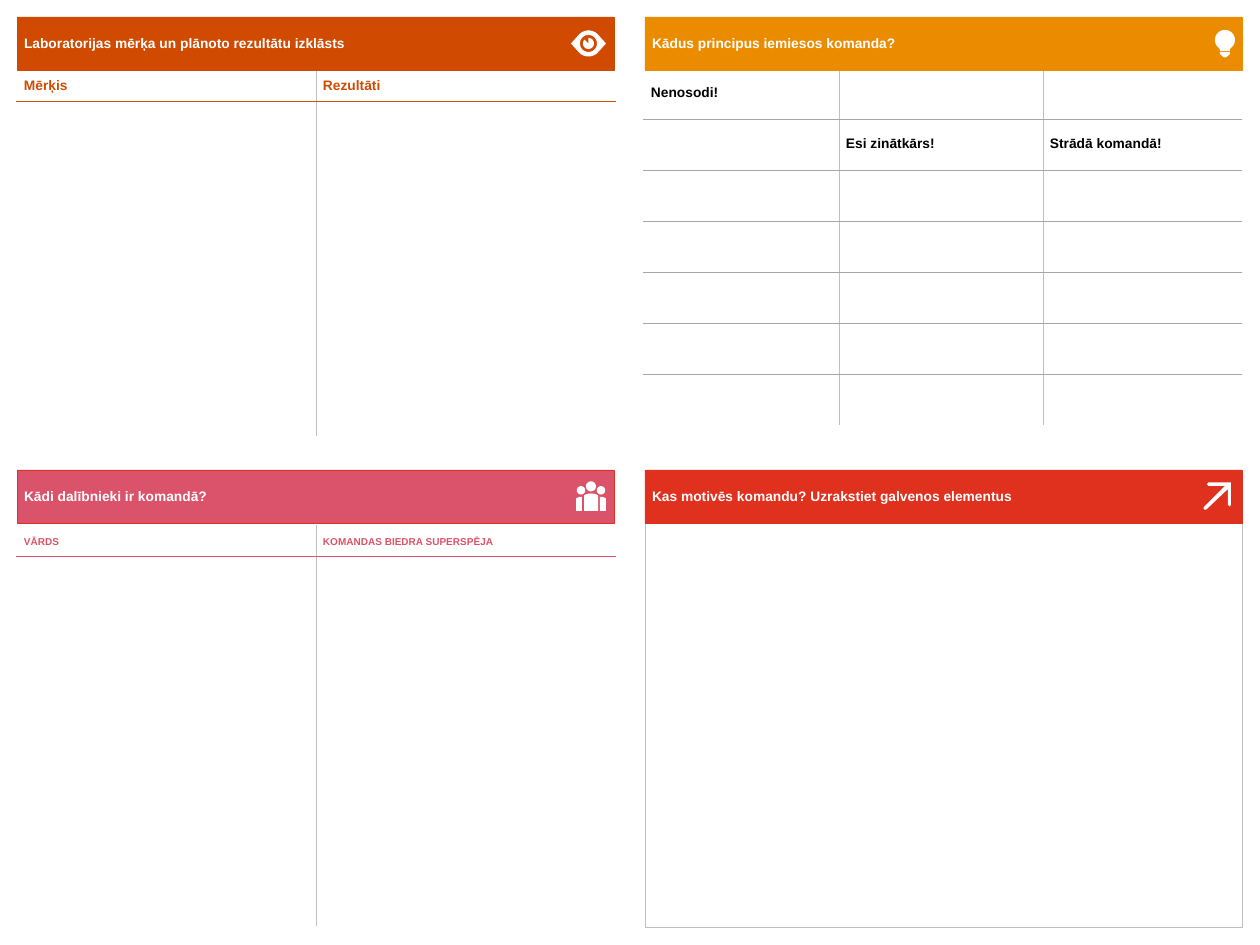
from math import cos, radians, sin

from lxml.etree import SubElement
from pptx import Presentation
from pptx.dml.color import RGBColor
from pptx.enum.shapes import MSO_SHAPE
from pptx.enum.text import MSO_ANCHOR, PP_ALIGN
from pptx.oxml.ns import qn
from pptx.util import Pt

PX = 914400 // 90
ICON_UNITS = 10  # freeform units per px

WHITE = RGBColor(0xFF, 0xFF, 0xFF)
BLACK = RGBColor(0x00, 0x00, 0x00)
ORANGE = RGBColor(0xD0, 0x4A, 0x02)
AMBER = RGBColor(0xEB, 0x8C, 0x00)
ROSE = RGBColor(0xDB, 0x53, 0x6A)
RED = RGBColor(0xE0, 0x30, 0x1E)
LIGHT_GREY = RGBColor(0xBF, 0xBF, 0xBF)
GREY = RGBColor(0xA6, 0xA6, 0xA6)

LEFT, RIGHT = 17, 645
TOP, BOTTOM = 17, 470
PANEL_WIDTH, HEADER_HEIGHT = 597, 53

# Content: headers as (text, left, top, fill, line)
MOTIVATION = ("Kas motivēs komandu? Uzrakstiet galvenos elementus", RIGHT, BOTTOM, RED, RED)
GOALS = ("Laboratorijas mērķa un plānoto rezultātu izklāsts", LEFT, TOP, ORANGE, ORANGE)
MEMBERS = ("Kādi dalībnieki ir komandā?", LEFT, BOTTOM, ROSE, RED)
PRINCIPLES = ("Kādus principus iemiesos komanda?", RIGHT, TOP, AMBER, AMBER)

PRINCIPLES_TABLE = dict(
    left=644, top=68, columns=[195, 204, 199], rows=[51] * 7,
    texts={(0, 0): "Nenosodi!", (1, 1): "Esi zinātkārs!", (1, 2): "Strādā komandā!"},
    size=11, color=BLACK, margins=(17, 16), rule=(GREY, 0.25))
GOALS_TABLE = dict(
    left=LEFT, top=68, columns=[299, 299], rows=[33, 335],
    texts={(0, 0): "Mērķis", (0, 1): "Rezultāti"},
    size=11, color=ORANGE, margins=(10, 7), rule=(ORANGE, 0.75))
MEMBERS_TABLE = dict(
    left=LEFT, top=526, columns=[299, 299], rows=[30, 370],
    texts={(0, 0): "VĀRDS", (0, 1): "KOMANDAS BIEDRA SUPERSPĒJA"},
    size=8, color=ROSE, margins=(10, 7), rule=(ROSE, 0.75))


def arc(center_x, center_y, radius, start=0, end=360, steps=36):
    angles = [radians(start + (end - start) * i / steps) for i in range(steps + 1)]
    return [(center_x + radius * cos(a), center_y + radius * sin(a)) for a in angles]


def mirror(points, axis):
    return [(2 * axis - x, y) for x, y in points]


# Icon outlines: each shape is a list of contours
EYE_X, EYE_Y = 588.5, 43.5
EYE = [[
    [(571, EYE_Y)] + arc(EYE_X, EYE_Y, 13, 225, 315)
    + [(606, EYE_Y)] + arc(EYE_X, EYE_Y, 13, 45, 135),
    arc(EYE_X, EYE_Y, 8.5),
    [(EYE_X, EYE_Y)] + arc(EYE_X, EYE_Y, 5.5, 225, -90),
]]
BULB = [[
    arc(1225, 40, 10, 140, 400) + [(1230, 49), (1230, 51), (1220, 51), (1220, 49)],
    [(1220, 52), (1230, 52), (1230, 54), (1226, 57.5), (1224, 57.5), (1220, 54)],
]]
TEAM_X = 591
SIDE_HEAD = arc(581, 490.3, 4.2)
SIDE_BODY = [(582, 497), (579, 497), (576, 498.5), (576, 511), (582, 511)]
MIDDLE_HALF = [(584, 511), (584, 495.5), (585.5, 494.5), (588, 493.8), (TEAM_X, 493.5)]
MIDDLE_BODY = MIDDLE_HALF + mirror(MIDDLE_HALF, TEAM_X)[::-1]
TEAM = [[points] for points in (
    arc(TEAM_X, 486.4, 5), SIDE_HEAD, mirror(SIDE_HEAD, TEAM_X),
    SIDE_BODY, MIDDLE_BODY, mirror(SIDE_BODY, TEAM_X))]
ARROW = [[[
    (1228, 489), (1206.5, 509.5), (1204.5, 509.8), (1203.5, 508.5), (1204, 507),
    (1225, 486), (1208.5, 486), (1207, 484.2), (1208.5, 482.5), (1231, 482.5),
    (1231, 505), (1229.5, 506.5), (1228, 505)]]]


def add_run(paragraph, text, size, color):
    paragraph.alignment = PP_ALIGN.LEFT
    run = paragraph.add_run()
    run.text = text
    run.font.name = "Arial"
    run.font.size = Pt(size)
    run.font.bold = True
    run.font.color.rgb = color


def add_rectangle(slide, left, top, width, height, fill, line, line_width):
    shape = slide.shapes.add_shape(
        MSO_SHAPE.RECTANGLE, left * PX, top * PX, width * PX, height * PX)
    shape.shadow.inherit = False
    if fill is None:
        shape.fill.background()
    else:
        shape.fill.solid()
        shape.fill.fore_color.rgb = fill
    shape.line.color.rgb = line
    shape.line.width = Pt(line_width)
    return shape


def add_header(slide, header, icon):
    text, left, top, fill, line = header
    shape = add_rectangle(slide, left, top, PANEL_WIDTH, HEADER_HEIGHT, fill, line, 0.25)
    frame = shape.text_frame
    frame.word_wrap = True
    frame.vertical_anchor = MSO_ANCHOR.MIDDLE
    frame.margin_left = frame.margin_right = 7 * PX
    frame.margin_top = frame.margin_bottom = 17 * PX
    add_run(frame.paragraphs[0], text, 11, WHITE)
    for contours in icon:
        add_outline(slide, contours)


def add_outline(slide, contours):
    scaled = [[(x * ICON_UNITS, y * ICON_UNITS) for x, y in points] for points in contours]
    builder = slide.shapes.build_freeform(*scaled[0][0], scale=PX / ICON_UNITS)
    for index, points in enumerate(scaled):
        if index:
            builder.move_to(*points[0])
        builder.add_line_segments(points[1:], close=True)
    shape = builder.convert_to_shape()
    shape.shadow.inherit = False
    shape.fill.solid()
    shape.fill.fore_color.rgb = WHITE
    shape.line.fill.background()


def set_border(cell, side, border):
    line = SubElement(cell._tc.get_or_add_tcPr(), qn("a:ln" + side))
    if border is None:
        SubElement(line, qn("a:noFill"))
        return
    color, width = border
    line.set("w", str(Pt(width)))
    fill = SubElement(line, qn("a:solidFill"))
    SubElement(fill, qn("a:srgbClr")).set("val", str(color))


def add_grid(slide, left, top, columns, rows, texts, size, color, margins, rule):
    table = slide.shapes.add_table(
        len(rows), len(columns), left * PX, top * PX,
        sum(columns) * PX, sum(rows) * PX).table
    table.first_row = table.horz_banding = False
    for column, width in zip(table.columns, columns):
        column.width = width * PX
    for row, height in zip(table.rows, rows):
        row.height = height * PX
    outer, divider = (WHITE, 1), (LIGHT_GREY, 0.25)
    last_row, last_column = len(rows) - 1, len(columns) - 1
    for r in range(len(rows)):
        for c in range(len(columns)):
            cell = table.cell(r, c)
            set_border(cell, "L", divider if c else outer)
            set_border(cell, "R", divider if c < last_column else outer)
            set_border(cell, "T", rule if r else outer)
            set_border(cell, "B", rule if r < last_row else None)
            cell.fill.background()
            if (r, c) in texts:
                cell.margin_left = cell.margin_right = 7 * PX
                cell.margin_top, cell.margin_bottom = (m * PX for m in margins)
                add_run(cell.text_frame.paragraphs[0], texts[r, c], size, color)


def main():
    presentation = Presentation()
    presentation.slide_width = 1260 * PX
    presentation.slide_height = 945 * PX
    slide = presentation.slides.add_slide(presentation.slide_layouts[6])

    # Empty motivation frame and the upper tables
    add_rectangle(slide, RIGHT, 481, PANEL_WIDTH, 446, None, LIGHT_GREY, 0.75)
    add_grid(slide, **PRINCIPLES_TABLE)
    add_grid(slide, **GOALS_TABLE)

    # Panel headers with icons
    add_header(slide, MOTIVATION, ARROW)
    add_header(slide, GOALS, EYE)
    add_header(slide, MEMBERS, TEAM)
    add_header(slide, PRINCIPLES, BULB)

    # Team members
    add_grid(slide, **MEMBERS_TABLE)
    presentation.save("out.pptx")


if __name__ == "__main__":
    main()
